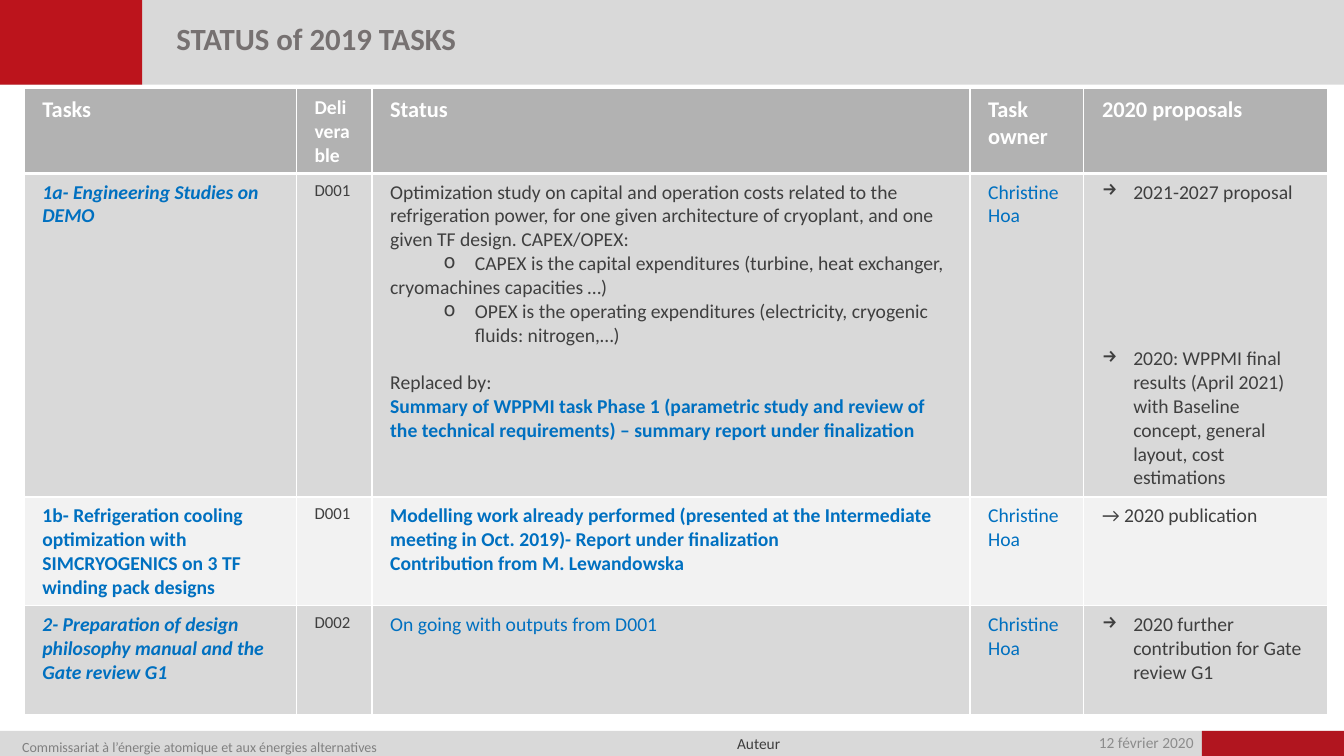
import pptx
import pptx.dml.color
import pptx.enum.shapes
import pptx.enum.text
import pptx.util
from lxml import etree
from pptx.oxml import ns

Inches = pptx.util.Inches
Pt = pptx.util.Pt
RGBColor = pptx.dml.color.RGBColor
Align = pptx.enum.text.PP_ALIGN
Anchor = pptx.enum.text.MSO_ANCHOR

WHITE = RGBColor(0xFF, 0xFF, 0xFF)
BAND = RGBColor(0xD9, 0xD9, 0xD9)
PALE = RGBColor(0xF2, 0xF2, 0xF2)
HEADER = RGBColor(0xB2, 0xB2, 0xB2)
RED = RGBColor(0xBC, 0x14, 0x1C)
DARK_RED = RGBColor(0xB1, 0x15, 0x1F)
BLUE = RGBColor(0x00, 0x70, 0xC0)
TEXT = RGBColor(0x3F, 0x3F, 0x3F)
TITLE = RGBColor(0x76, 0x71, 0x71)
DATE = RGBColor(0x8C, 0x8C, 0x8C)
FOOTER = RGBColor(0x80, 0x80, 0x80)

HEAD = {"size": Pt(16), "bold": True, "color": WHITE}
SMALL_HEAD = {**HEAD, "size": Pt(14)}
PLAIN = {"size": Pt(14), "bold": False, "color": TEXT}
CODE = {**PLAIN, "size": Pt(12)}
LINK = {**PLAIN, "color": BLUE}
STRONG = {**LINK, "bold": True}
TASK = {**STRONG, "italic": True}
ARROW = {**PLAIN, "bullet": "→", "margin": 0.31}
CIRCLE = {**PLAIN, "bullet": "o", "margin": 0.84}
HANGING = 0.31

OWNER = [("Christine Hoa", LINK)]
HEADINGS = [
    [("Tasks", HEAD)],
    [("Deliverable", SMALL_HEAD)],
    [("Status", HEAD)],
    [("Task owner", HEAD)],
    [("2020 proposals", HEAD)],
]
DEMO_STUDIES = [
    [("1a- Engineering Studies on DEMO", TASK)],
    [("D001", CODE)],
    [
        ("Optimization study on capital and operation costs related to the refrigeration power, "
         "for one given architecture of cryoplant, and one given TF design. CAPEX/OPEX:", PLAIN),
        ("CAPEX is the capital expenditures (turbine, heat exchanger,", CIRCLE),
        ("cryomachines capacities …)", PLAIN),
        ("OPEX is the operating expenditures (electricity, cryogenic fluids: nitrogen,…)", CIRCLE),
        ("Replaced by:", {**PLAIN, "space_before": Pt(17)}),
        ("Summary of WPPMI task Phase 1 (parametric study and review of the technical "
         "requirements) – summary report under finalization", STRONG),
    ],
    OWNER,
    [
        ("2021-2027 proposal", ARROW),
        ("2020: WPPMI final results (April 2021) with Baseline concept, general layout, "
         "cost estimations", {**ARROW, "space_before": Pt(102)}),
    ],
]
COOLING = [
    [("1b- Refrigeration cooling optimization with SIMCRYOGENICS on 3 TF winding pack designs",
      STRONG)],
    [("D001", CODE)],
    [
        ("Modelling work already performed (presented at the Intermediate meeting in Oct. 2019)"
         "- Report under finalization", STRONG),
        ("Contribution from M. Lewandowska", STRONG),
    ],
    OWNER,
    [("→ 2020 publication", PLAIN)],
]
MANUAL = [
    [("2- Preparation of design philosophy manual and the Gate review G1", TASK)],
    [("D002", CODE)],
    [("On going with outputs from D001", LINK)],
    OWNER,
    [("2020 further contribution for Gate review G1", ARROW)],
]
TASK_ROWS = [
    (HEADINGS, HEADER, 0.83),
    (DEMO_STUDIES, BAND, 3.21),
    (COOLING, PALE, 1.08),
    (MANUAL, BAND, 1.08),
]
COLUMN_WIDTHS = [2.7, 0.75, 5.93, 1.13, 2.42]


class StatusSlide:
    font_name = "Calibri"

    def __init__(self, slide):
        self.slide = slide

    def block(self, left, top, width, height, color):
        bar = self.slide.shapes.add_shape(
            pptx.enum.shapes.MSO_SHAPE.RECTANGLE,
            Inches(left), Inches(top), Inches(width), Inches(height))
        bar.shadow.inherit = False
        bar.fill.solid()
        bar.fill.fore_color.rgb = color
        bar.line.fill.background()

    def set_text(self, frame, paragraphs):
        for index, (words, style) in enumerate(paragraphs):
            line = frame.paragraphs[0] if index == 0 else frame.add_paragraph()
            if "bullet" in style:
                self.bullet(line, style["bullet"], style["margin"])
            run = line.add_run()
            run.text = words
            run.font.name = self.font_name
            run.font.color.rgb = style["color"]
            for key, value in style.items():
                if key in ("size", "bold", "italic"):
                    setattr(run.font, key, value)
                elif key in ("alignment", "line_spacing", "space_before"):
                    setattr(line, key, value)

    def bullet(self, line, mark, margin):
        properties = line._p.get_or_add_pPr()
        properties.set("marL", str(Inches(margin)))
        properties.set("indent", str(-Inches(HANGING)))
        etree.SubElement(properties, ns.qn("a:buChar")).set("char", mark)

    def label(self, left, top, width, height, words, style, side=0.08, edge=0,
              anchor=Anchor.TOP, wrap=True):
        box = self.slide.shapes.add_textbox(
            Inches(left), Inches(top), Inches(width), Inches(height))
        layout = {
            "margin_left": Inches(side), "margin_right": Inches(side),
            "margin_top": Inches(edge), "margin_bottom": Inches(edge),
            "vertical_anchor": anchor, "word_wrap": wrap,
        }
        for key, value in layout.items():
            setattr(box.text_frame, key, value)
        self.set_text(box.text_frame, [(words, style)])

    def borders(self, cell, top, bottom):
        properties = cell._tc.get_or_add_tcPr()
        for side, width in {"L": 1, "R": 1, "T": top, "B": bottom}.items():
            border = etree.SubElement(properties, ns.qn(f"a:ln{side}"), w=str(Pt(width)))
            fill = etree.SubElement(border, ns.qn("a:solidFill"))
            etree.SubElement(fill, ns.qn("a:srgbClr"), val=str(WHITE))

    def table(self, left, top, rows, widths):
        heights = [height for _, _, height in rows]
        grid = self.slide.shapes.add_table(
            len(rows), len(widths), Inches(left), Inches(top),
            Inches(sum(widths)), Inches(sum(heights))).table
        grid.horz_banding = False
        for column, width in zip(grid.columns, widths):
            column.width = Inches(width)
        margins = {"margin_left": 0.18, "margin_right": 0.18,
                   "margin_top": 0.07, "margin_bottom": 0.07}
        for number, (contents, color, height) in enumerate(rows):
            grid.rows[number].height = Inches(height)
            for cell, paragraphs in zip(grid.rows[number].cells, contents):
                for key, value in margins.items():
                    setattr(cell, key, Inches(value))
                self.borders(cell, 3 if number == 1 else 1, 3 if number == 0 else 1)
                cell.fill.solid()
                cell.fill.fore_color.rgb = color
                self.set_text(cell.text_frame, paragraphs)


def main():
    deck = pptx.Presentation()
    deck.slide_width = Inches(13.33)
    deck.slide_height = Inches(7.5)
    status = StatusSlide(deck.slides.add_slide(deck.slide_layouts[6]))

    status.block(0, 7.25, 13.33, 0.25, BAND)
    status.block(0, 0, 13.33, 0.84, BAND)
    status.block(11.92, 7.25, 1.41, 0.25, DARK_RED)
    status.block(0, 0, 1.41, 0.84, RED)

    status.label(9.61, 7.29, 2.31, 0.17, "12 février 2020",
                 {"size": Pt(11), "color": DATE, "alignment": Align.RIGHT, "line_spacing": 0.9})
    status.label(0.14, 7.26, 6.03, 0.21,
                 "Commissariat à l’énergie atomique et aux énergies alternatives",
                 {"size": Pt(10), "color": FOOTER, "line_spacing": 1.4})
    status.label(7.23, 7.28, 0.59, 0.19, "Auteur",
                 {"size": Pt(11), "color": TEXT}, wrap=False)
    status.label(1.61, 0.21, 6.41, 0.41, "STATUS of 2019 TASKS",
                 {"size": Pt(22), "bold": True, "color": TITLE, "line_spacing": 0.8},
                 side=0.14, edge=0.05, anchor=Anchor.MIDDLE)
    status.table(0.24, 0.88, TASK_ROWS, COLUMN_WIDTHS)

    deck.save("out.pptx")


if __name__ == "__main__":
    main()
